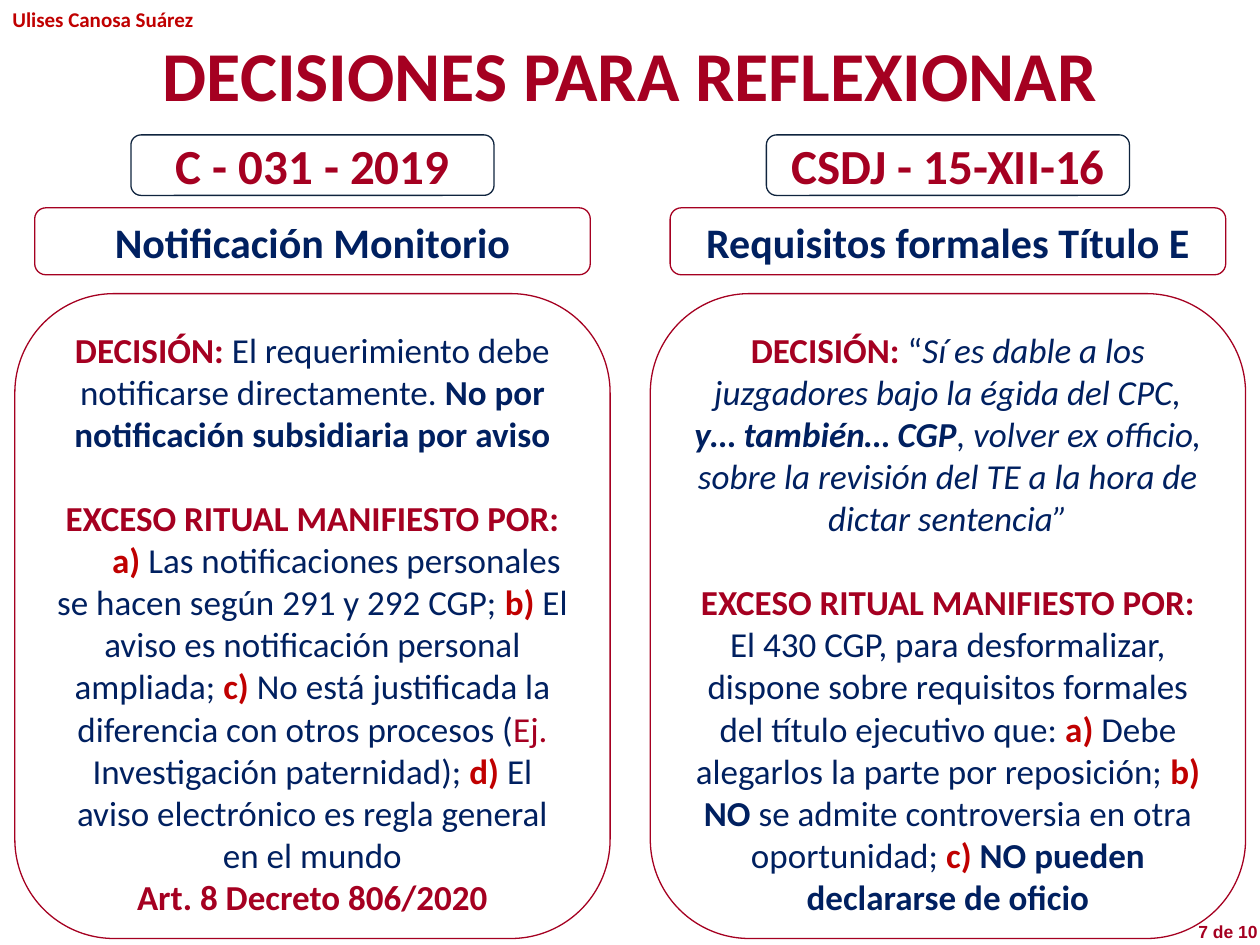
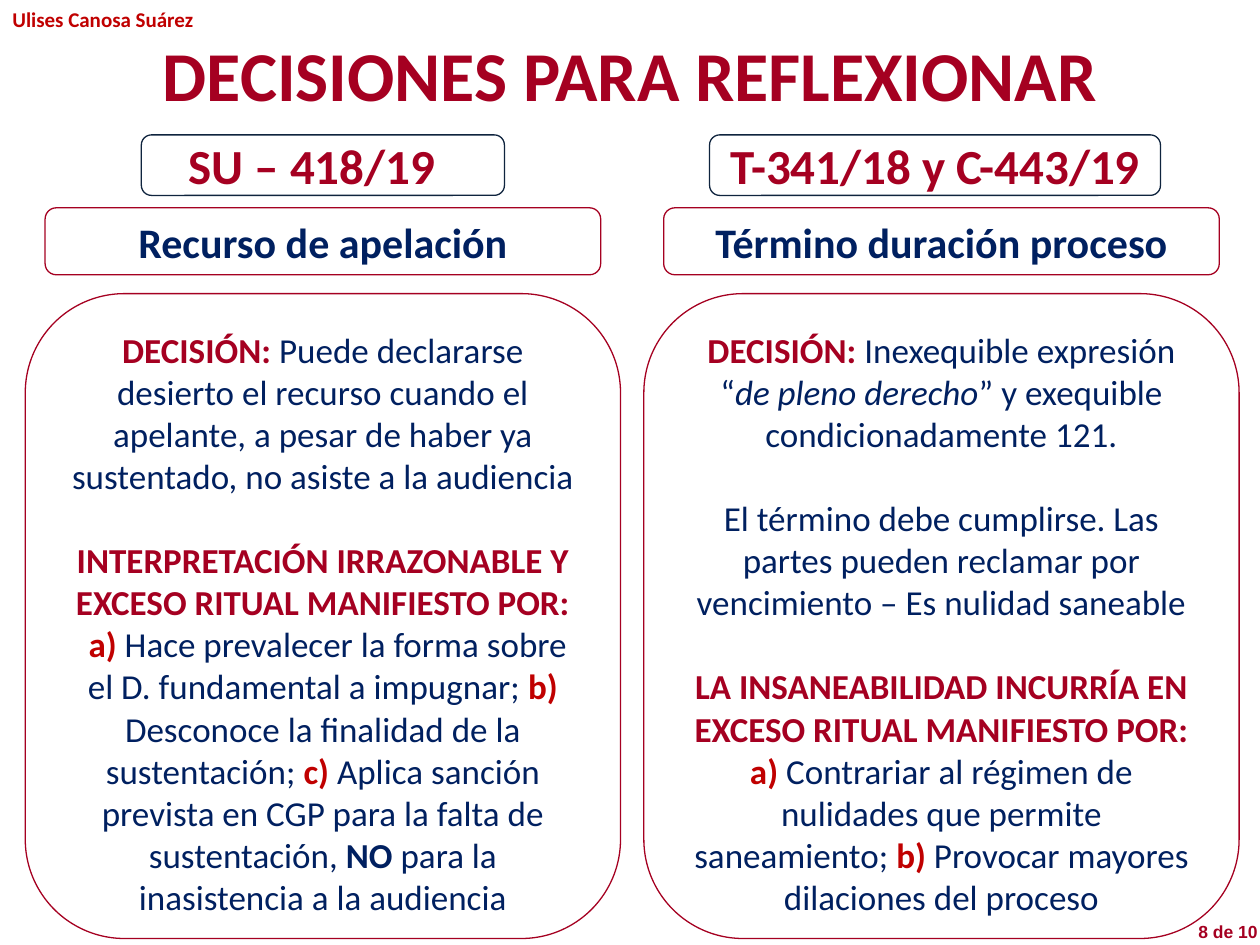
"""Build two slides that set court rulings side by side."""
import pptx
import pptx.dml.color
import pptx.enum.shapes
import pptx.enum.text
import pptx.util

Cm = pptx.util.Cm
Pt = pptx.util.Pt
SHAPES = pptx.enum.shapes.MSO_SHAPE
ALIGN = pptx.enum.text.PP_ALIGN
ANCHOR = pptx.enum.text.MSO_ANCHOR

COLORS = {"crimson": "A50021", "red": "C00000", "navy": "002060",
          "slate": "0F243E", "white": "FFFFFF"}

STYLES = {
    "lead": ("crimson", True, False),
    "mark": ("red", True, False),
    "plain": ("navy", False, False),
    "strong": ("navy", True, False),
    "quote": ("navy", False, True),
    "key quote": ("navy", True, True),
    "aside": ("crimson", False, False),
}

TOTAL_PAGES = 10
SECTION_GAP = 24


class Deck:
    """Holds the shared style and the current slide."""

    def __init__(self):
        self.show = pptx.Presentation()
        self.show.slide_width, self.show.slide_height = Cm(25.4), Cm(19.05)
        self.slide = None

    def page(self):
        """Start a slide with its author and title."""
        self.slide = self.show.slides.add_slide(self.show.slide_layouts[6])
        self.label(0, 0, 7.5, 0.76, "Ulises Canosa Suárez", "mark", 12)
        self.label(0.1, 0.51, 25.2, 2.01, "DECISIONES PARA REFLEXIONAR",
                   "lead", 40, ALIGN.CENTER)

    def page_count(self, number):
        """Put the page count in the lower right corner."""
        self.label(23.11, 18.44, 2.49, 0.69, f"{number} de {TOTAL_PAGES}",
                   "lead", 10, ALIGN.RIGHT, "Arial")

    def add_runs(self, paragraph, runs, size, align, font="Calibri"):
        """Add styled runs to a paragraph."""
        paragraph.alignment = align
        for style, wording in runs:
            color, bold, italic = STYLES[style]
            run = paragraph.add_run()
            run.text = wording
            run.font.name, run.font.size = font, Pt(size)
            run.font.bold, run.font.italic = bold, italic
            run.font.color.rgb = pptx.dml.color.RGBColor.from_string(COLORS[color])

    def label(self, left, top, width, height, wording, style, size,
              align=ALIGN.LEFT, font="Calibri"):
        """Add a line of free text."""
        frame = self.slide.shapes.add_textbox(
            Cm(left), Cm(top), Cm(width), Cm(height)).text_frame
        frame.word_wrap = True
        self.add_runs(frame.paragraphs[0], [(style, wording)], size, align, font)

    def panel(self, kind, center, top, width, height, edge, anchor):
        """Add an outlined panel around a centre line and give its text frame."""
        panel = self.slide.shapes.add_shape(
            kind, Cm(center - width / 2), Cm(top), Cm(width), Cm(height))
        panel.shadow.inherit = False
        panel.fill.solid()
        panel.fill.fore_color.rgb = pptx.dml.color.RGBColor.from_string(COLORS["white"])
        panel.line.color.rgb = pptx.dml.color.RGBColor.from_string(COLORS[edge])
        panel.line.width = Pt(0.75)
        panel.text_frame.word_wrap = True
        panel.text_frame.vertical_anchor = anchor
        return panel.text_frame

    def ruling(self, center, citation, topic, reasoning, citation_width=7.32,
               citation_shift=0, citation_inset=0.25):
        """Add one column: citation, topic and reasoning."""
        heading = self.panel(SHAPES.ROUNDED_RECTANGLE, center + citation_shift, 2.72,
                             citation_width, 1.22, "slate", ANCHOR.MIDDLE)
        heading.margin_right = Cm(citation_inset)
        self.add_runs(heading.paragraphs[0], [("lead", citation)], 28, ALIGN.CENTER)

        subject = self.panel(SHAPES.FLOWCHART_ALTERNATE_PROCESS, center, 4.19,
                             11.2, 1.35, "crimson", ANCHOR.MIDDLE)
        self.add_runs(subject.paragraphs[0], [("strong", topic)], 24, ALIGN.CENTER)

        body = self.panel(SHAPES.FLOWCHART_ALTERNATE_PROCESS, center, 5.92,
                          12, 13, "crimson", ANCHOR.TOP)
        for index, (gap, indent, runs) in enumerate(reasoning):
            paragraph = body.add_paragraph() if index else body.paragraphs[0]
            paragraph.space_before = Pt(gap)
            if indent:
                paragraph._p.get_or_add_pPr().set("indent", str(int(Cm(indent))))
            self.add_runs(paragraph, runs, 20, ALIGN.CENTER)


PAYMENT_ORDER = [
    (0, 0, [("lead", "DECISIÓN: "),
            ("plain", "El requerimiento debe notificarse directamente. "),
            ("strong", "No por notificación subsidiaria por aviso")]),
    (SECTION_GAP, 0, [("lead", "EXCESO RITUAL MANIFIESTO POR:")]),
    (0, 0.97, [("mark", "a) "),
               ("plain", "Las notificaciones personales se hacen según 291 y 292 CGP; "),
               ("mark", "b)"),
               ("plain", " El aviso es notificación personal ampliada; "),
               ("mark", "c) "),
               ("plain", "No está justificada la diferencia con otros procesos ("),
               ("aside", "Ej. "),
               ("plain", "Investigación paternidad); "),
               ("mark", "d) "),
               ("plain", "El aviso electrónico es regla general en el mundo")]),
    (0, 0, [("lead", "Art. 8 Decreto 806/2020")]),
]

ENFORCEABLE_TITLE = [
    (0, 0, [("lead", "DECISIÓN: "),
            ("plain", "“"),
            ("quote", "Sí es dable a los juzgadores bajo la égida del CPC, "),
            ("key quote", "y… también… CGP"),
            ("quote", ", volver ex officio, sobre la revisión del TE "
                      "a la hora de dictar sentencia”")]),
    (SECTION_GAP, 0, [("lead", "EXCESO RITUAL MANIFIESTO POR:")]),
    (0, 0, [("plain", "El 430 CGP, para desformalizar, dispone sobre requisitos "
                      "formales del título ejecutivo que: "),
            ("mark", "a) "),
            ("plain", "Debe alegarlos la parte por reposición; "),
            ("mark", "b) "),
            ("strong", "NO"),
            ("plain", " se admite controversia en otra oportunidad; "),
            ("mark", "c) "),
            ("strong", "NO pueden declararse de oficio")]),
]

APPEAL = [
    (0, 0, [("lead", "DECISIÓN: "),
            ("plain", "Puede declararse desierto el recurso cuando el apelante, "
                      "a pesar de haber ya sustentado, no asiste a la audiencia")]),
    (SECTION_GAP, 0, [("lead", "INTERPRETACIÓN IRRAZONABLE Y "
                               "EXCESO RITUAL MANIFIESTO POR:")]),
    (0, 0.2, [("mark", "a) "),
              ("plain", "Hace prevalecer la forma sobre el D. fundamental a impugnar; "),
              ("mark", "b)"),
              ("plain", " Desconoce la finalidad de la sustentación; "),
              ("mark", "c) "),
              ("plain", "Aplica sanción prevista en CGP para la falta de sustentación, "),
              ("strong", "NO"),
              ("plain", " para la inasistencia a la audiencia")]),
]

TIME_LIMIT = [
    (0, 0, [("lead", "DECISIÓN: "),
            ("plain", "Inexequible expresión “"),
            ("quote", "de pleno derecho"),
            ("plain", "” y exequible condicionadamente 121.")]),
    (SECTION_GAP, 0, [("plain", "El término debe cumplirse. Las partes pueden reclamar "
                                "por vencimiento – Es nulidad saneable")]),
    (SECTION_GAP, 0, [("lead", "LA INSANEABILIDAD INCURRÍA EN "
                               "EXCESO RITUAL MANIFIESTO POR:")]),
    (0, 0, [("mark", "a) "),
            ("plain", "Contrariar al régimen de nulidades que permite saneamiento; "),
            ("mark", "b)"),
            ("plain", " Provocar mayores dilaciones del proceso")]),
]


def main():
    """Build and save both slides."""
    deck = Deck()

    deck.page()
    deck.ruling(6.3, "C - 031 - 2019", "Notificación Monitorio", PAYMENT_ORDER)
    deck.ruling(19.11, "CSDJ - 15-XII-16", "Requisitos formales Título E",
                ENFORCEABLE_TITLE)
    deck.page_count(7)

    deck.page()
    deck.ruling(6.51, "SU – 418/19", "Recurso de apelación", APPEAL,
                citation_inset=0.7)
    deck.ruling(18.98, "T-341/18 y C-443/19", "Término duración proceso", TIME_LIMIT,
                citation_width=9.09, citation_shift=-0.13)
    deck.page_count(8)

    deck.show.save("out.pptx")


if __name__ == "__main__":
    main()
